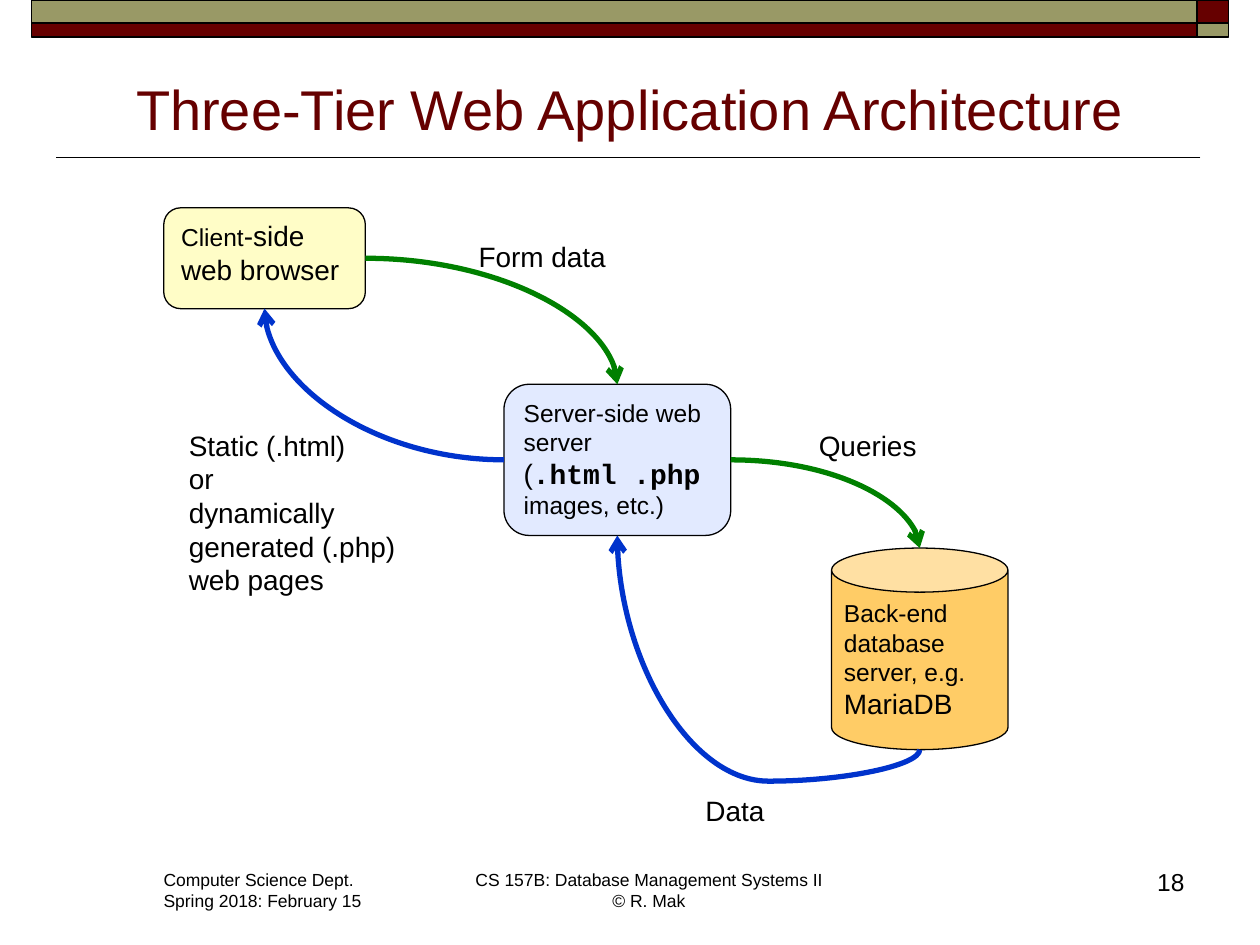
from dataclasses import dataclass
from typing import NamedTuple, Optional

from lxml.etree import SubElement
from pptx import Presentation
from pptx.dml.color import RGBColor
from pptx.enum.shapes import MSO_CONNECTOR, MSO_SHAPE
from pptx.enum.text import MSO_ANCHOR, MSO_AUTO_SIZE, PP_ALIGN
from pptx.oxml.ns import qn
from pptx.util import Pt

BLACK, MAROON, OLIVE = "000000", "660000", "999966"
REQUEST, RESPONSE = "008000", "0033CC"


class Run(NamedTuple):
    text: str
    size: float = 16
    font: str = "Arial"
    bold: bool = False
    color: str = BLACK


class Box(NamedTuple):
    left: float
    top: float
    width: float
    height: float


@dataclass
class Tier:
    preset: MSO_SHAPE
    box: Box
    fill: str
    paragraphs: list[list[Run]]


@dataclass
class Label:
    box: Box
    paragraphs: list[list[Run]]
    align: PP_ALIGN = PP_ALIGN.LEFT
    anchor: MSO_ANCHOR = MSO_ANCHOR.TOP
    wrap: bool = False


@dataclass
class Flow:
    start: tuple[float, float]
    end: tuple[float, float]
    color: str
    preset: str = "curvedConnector2"
    rotation: int = 0
    bend: Optional[int] = None


def rgb(color: str) -> RGBColor:
    return RGBColor.from_string(color)


def write(frame, paragraphs: list[list[Run]], align: PP_ALIGN = PP_ALIGN.LEFT) -> None:
    for index, runs in enumerate(paragraphs):
        paragraph = frame.add_paragraph() if index else frame.paragraphs[0]
        paragraph.alignment = align
        for item in runs:
            if item.text == "\n":
                paragraph.add_line_break()
                continue
            run = paragraph.add_run()
            run.text = item.text
            run.font.size = Pt(item.size)
            run.font.name = item.font
            run.font.bold = item.bold
            run.font.color.rgb = rgb(item.color)


def add_filled(slide, preset: MSO_SHAPE, box: Box, fill: str, line_width: float):
    shape = slide.shapes.add_shape(preset, *map(Pt, box))
    shape.shadow.inherit = False
    shape.fill.solid()
    shape.fill.fore_color.rgb = rgb(fill)
    shape.line.color.rgb = rgb(BLACK)
    shape.line.width = Pt(line_width)
    return shape


def add_tier(slide, tier: Tier) -> None:
    frame = add_filled(slide, tier.preset, tier.box, tier.fill, 0.75).text_frame
    frame.word_wrap = True
    frame.vertical_anchor = MSO_ANCHOR.TOP
    write(frame, tier.paragraphs)


def add_label(slide, label: Label) -> None:
    frame = slide.shapes.add_textbox(*map(Pt, label.box)).text_frame
    frame.word_wrap = label.wrap
    frame.auto_size = MSO_AUTO_SIZE.NONE if label.wrap else MSO_AUTO_SIZE.SHAPE_TO_FIT_TEXT
    frame.vertical_anchor = label.anchor
    write(frame, label.paragraphs, label.align)


def add_line(slide, kind: MSO_CONNECTOR, start, end, color: str, width: float):
    line = slide.shapes.add_connector(kind, *map(Pt, (*start, *end)))
    line.line.color.rgb = rgb(color)
    line.line.width = Pt(width)
    SubElement(line._element.spPr, qn("a:effectLst"))
    return line


def add_flow(slide, flow: Flow) -> None:
    curve = add_line(slide, MSO_CONNECTOR.CURVE, flow.start, flow.end, flow.color, 3)
    properties = curve._element.spPr
    SubElement(properties.find(qn("a:ln")), qn("a:tailEnd"), type="arrow")
    geometry = properties.find(qn("a:prstGeom"))
    geometry.set("prst", flow.preset)
    if flow.rotation:
        properties.find(qn("a:xfrm")).set("rot", str(flow.rotation * 60000))
    if flow.bend is not None:
        SubElement(geometry.find(qn("a:avLst")), qn("a:gd"),
                   name="adj1", fmla=f"val {flow.bend}")


BANDS = [
    (Box(684, 0, 18, 13), MAROON),
    (Box(18, 0, 666, 13), OLIVE),
    (Box(18, 13, 666, 8), MAROON),
    (Box(684, 13, 18, 8), OLIVE),
]

TIERS = [
    Tier(MSO_SHAPE.ROUNDED_RECTANGLE, Box(93.6, 118.8, 115.2, 57.6), "FFFDC7",
         [[Run("Client", 14), Run("-side web browser")]]),
    Tier(MSO_SHAPE.ROUNDED_RECTANGLE, Box(288, 219.6, 129.6, 86.4), "E2EAFF",
         [[Run("Server-side web server", 14)],
          [Run("("), Run(".html .php", font="Courier New", bold=True)],
          [Run("images, etc.)", 14)]]),
    Tier(MSO_SHAPE.CAN, Box(475.2, 313.2, 100.8, 115.2), "FFCC66",
         [[Run("Back-end database server, e.g.", 14)], [Run("MariaDB")]]),
]

FLOWS = [
    Flow((208.8, 147.6), (352.8, 219.6), REQUEST),
    Flow((288, 262.8), (151.2, 176.4), RESPONSE),
    Flow((417.6, 262.8), (525.6, 313.2), REQUEST),
    Flow((500.4, 280.8), (378, 453.6), RESPONSE, "curvedConnector3", 90, -14700),
]

PAGES = ["Static (.html)", "or", "dynamically", "generated (.php)", "web pages"]

LABELS = [
    Label(Box(36, 32.4, 648, 51.84),
          [[Run("Three-Tier Web Application Architecture", 32, color=MAROON)]],
          PP_ALIGN.CENTER, MSO_ANCHOR.BOTTOM, True),
    Label(Box(266.4, 133.2, 87.84, 26.64), [[Run("Form data")]]),
    Label(Box(460.8, 241.2, 71.28, 26.64), [[Run("Queries")]]),
    Label(Box(396, 450, 48.96, 26.64), [[Run("Data")]]),
    Label(Box(100.8, 241.2, 133.92, 104.4), [[Run(text)] for text in PAGES]),
    Label(Box(86.4, 493.2, 128.88, 31.68),
          [[Run("Computer Science Dept.", 10)], [Run("Spring 2018: February 15", 10)]]),
    Label(Box(263.52, 493.2, 214.56, 31.68),
          [[Run("CS 157B: Database Management Systems II", 10), Run("\n"),
            Run("© R. Mak", 10)]], PP_ALIGN.CENTER),
    Label(Box(626.4, 491.76, 57.6, 36), [[Run("18", 14)]], PP_ALIGN.RIGHT, wrap=True),
]


def main() -> None:
    presentation = Presentation()
    presentation.slide_width, presentation.slide_height = Pt(720), Pt(540)
    slide = presentation.slides.add_slide(presentation.slide_layouts[6])
    add_line(slide, MSO_CONNECTOR.STRAIGHT, (686, 90), (32, 90), BLACK, 1)
    for box, fill in BANDS:
        add_filled(slide, MSO_SHAPE.RECTANGLE, box, fill, 1)
    for tier in TIERS:
        add_tier(slide, tier)
    for flow in FLOWS:
        add_flow(slide, flow)
    for label in LABELS:
        add_label(slide, label)
    presentation.save("out.pptx")


if __name__ == "__main__":
    main()
